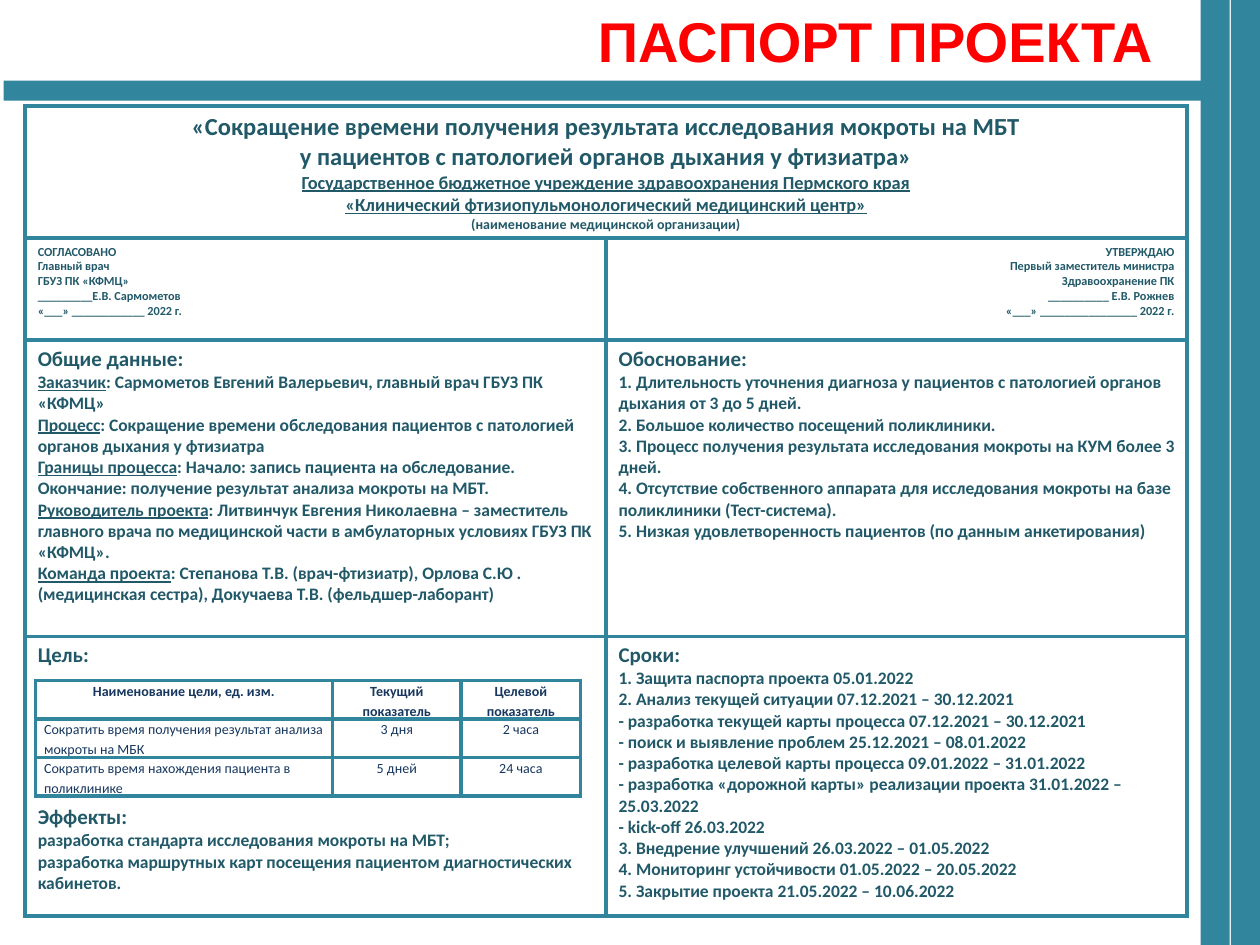
"""Builds the project passport slide with its main table and goals table."""
import pptx
import pptx.dml.color
import pptx.enum.shapes
import pptx.enum.text
import pptx.oxml
import pptx.oxml.ns
import pptx.util

Inches = pptx.util.Inches
Pt = pptx.util.Pt
Align = pptx.enum.text.PP_ALIGN
TEAL, DARK_TEAL, NAVY, RED = "31859C", "215968", "17375E", "FF0000"

HEADER = [
    (14, "«Сокращение времени получения результата исследования мокроты на МБТ"),
    (14, "у пациентов с патологией органов дыхания у фтизиатра»"),
    (10.5, ("Государственное бюджетное учреждение здравоохранения Пермского края", "")),
    (10.5, ("«Клинический фтизиопульмонологический медицинский центр»", "")),
    (8, "(наименование медицинской организации)"),
]
AGREED = ["СОГЛАСОВАНО", "Главный врач", "ГБУЗ ПК «КФМЦ»",
          "_________Е.В. Сармометов", "«___» ____________ 2022 г."]
APPROVED = ["УТВЕРЖДАЮ", "Первый заместитель министра", "Здравоохранение ПК",
            "__________ Е.В. Рожнев", "«___» ________________ 2022 г."]
GENERAL = [
    ("Заказчик", ": Сармометов Евгений Валерьевич, главный врач ГБУЗ ПК «КФМЦ»"),
    ("Процесс", ": Сокращение времени обследования пациентов с патологией органов "
     "дыхания у фтизиатра"),
    ("Границы процесса", ": Начало: запись пациента на обследование. "
     "Окончание: получение результат анализа мокроты на МБТ."),
    ("Руководитель проекта", ": Литвинчук Евгения Николаевна – заместитель главного врача "
     "по медицинской части в амбулаторных условиях ГБУЗ ПК «КФМЦ»."),
    ("Команда проекта", ": Степанова Т.В. (врач-фтизиатр), Орлова С.Ю . "
     "(медицинская сестра), Докучаева Т.В. (фельдшер-лаборант)"),
]
REASONS = [
    "1. Длительность уточнения диагноза у пациентов с патологией органов дыхания от 3 до 5 дней.",
    "2. Большое количество посещений поликлиники.",
    "3. Процесс получения результата исследования мокроты на КУМ более 3 дней.",
    "4. Отсутствие собственного аппарата для исследования мокроты на базе "
    "поликлиники (Тест-система).",
    "5. Низкая удовлетворенность пациентов (по данным анкетирования)",
]
EFFECTS = [
    "разработка стандарта исследования мокроты на МБТ;",
    "разработка маршрутных карт посещения пациентом диагностических кабинетов.",
]
SCHEDULE = [
    "1. Защита паспорта проекта 05.01.2022",
    "2. Анализ текущей ситуации 07.12.2021 – 30.12.2021",
    "- разработка текущей карты процесса 07.12.2021 – 30.12.2021",
    "- поиск и выявление проблем 25.12.2021 – 08.01.2022",
    "- разработка целевой карты процесса 09.01.2022 – 31.01.2022",
    "- разработка «дорожной карты» реализации проекта 31.01.2022 – 25.03.2022",
    "- kick-off 26.03.2022",
    "3. Внедрение улучшений 26.03.2022 – 01.05.2022",
    "4. Мониторинг устойчивости 01.05.2022 – 20.05.2022",
    "5. Закрытие проекта 21.05.2022 – 10.06.2022",
]
GOALS = [
    ["Наименование цели, ед. изм.", "Текущий показатель", "Целевой показатель"],
    ["Сократить время получения результат анализа мокроты на МБК", "3 дня", "2 часа"],
    ["Сократить время нахождения пациента в поликлинике", "5 дней", "24 часа"],
]


def color(value):
    """Turn a hex string into a colour."""
    return pptx.dml.color.RGBColor.from_string(value)


def sized(size, texts):
    """Give every text the same size."""
    return [(size, text) for text in texts]


def section(heading, texts):
    """Put a large heading above body lines."""
    return [(12, heading)] + sized(10, texts)


class Builder:
    """Holds the style and the current page."""

    def __init__(self, page, font="Calibri", accent=TEAL):
        self.page, self.font, self.accent = page, font, accent

    def bar(self, left, top, width, height):
        """Draw a plain accent bar."""
        bar = self.page.shapes.add_shape(
            pptx.enum.shapes.MSO_SHAPE.RECTANGLE,
            Inches(left), Inches(top), Inches(width), Inches(height))
        bar.shadow.inherit = False
        bar.fill.solid()
        bar.fill.fore_color.rgb = color(self.accent)
        bar.line.fill.background()

    def add_lines(self, frame, lines, align=Align.LEFT, ink=DARK_TEAL, bold=True,
                  font=None, spacing=None):
        """Add sized lines; a pair is an underlined label and its text."""
        for index, (size, text) in enumerate(lines):
            para = frame.paragraphs[0] if index == 0 else frame.add_paragraph()
            para.alignment = align
            if spacing:
                para.line_spacing = spacing
            label, rest = ("", text) if isinstance(text, str) else text
            for words, underline in ((label, True), (rest, False)):
                if words:
                    span = para.add_run()
                    span.text = words
                    span.font.name = font or self.font
                    span.font.size = Pt(size)
                    span.font.bold = bold
                    span.font.underline = underline
                    span.font.color.rgb = color(ink)

    def title(self, text, left, top, width, height):
        """Add the right-aligned slide title."""
        box = self.page.shapes.add_textbox(
            Inches(left), Inches(top), Inches(width), Inches(height))
        box.text_frame.word_wrap = True
        box.text_frame.margin_right = Inches(0.35)
        self.add_lines(box.text_frame, [(32, text)], Align.RIGHT, RED, font="Arial")

    def table(self, left, top, widths, heights):
        """Add an unfilled table with accent borders."""
        table = self.page.shapes.add_table(
            len(heights), len(widths), Inches(left), Inches(top),
            Inches(sum(widths)), Inches(sum(heights))).table
        table.first_row = table.horz_banding = False
        for column, width in zip(table.columns, widths):
            column.width = Inches(width)
        for row, height in zip(table.rows, heights):
            row.height = Inches(height)
        for cell in table.iter_cells():
            cell.fill.background()
            self.border(cell)
        return table

    def border(self, cell):
        """Outline one cell."""
        properties = cell._tc.get_or_add_tcPr()
        for index, side in enumerate("LRTB"):
            properties.insert(index, pptx.oxml.parse_xml(
                f'<a:ln{side} {pptx.oxml.ns.nsdecls("a")} w="{Pt(2.25)}"><a:solidFill>'
                f'<a:srgbClr val="{self.accent}"/></a:solidFill></a:ln{side}>'))

    def passport(self):
        """Add the main table of the project."""
        table = self.table(0.2, 0.84, [4.61] * 2, [1.05, 0.81, 2.35, 2.22])
        table.cell(0, 0).merge(table.cell(0, 1))
        goal = section("Цель:", []) + section("Эффекты:", EFFECTS)
        contents = [
            (0, 0, HEADER, Align.CENTER),
            (1, 0, sized(7, AGREED), Align.LEFT),
            (1, 1, sized(7, APPROVED), Align.RIGHT),
            (2, 0, section("Общие данные:", GENERAL), Align.LEFT),
            (2, 1, section("Обоснование:", REASONS), Align.LEFT),
            (3, 0, goal, Align.LEFT),
            (3, 1, section("Сроки:", SCHEDULE), Align.LEFT),
        ]
        for row, column, lines, align in contents:
            self.add_lines(table.cell(row, column).text_frame, lines, align)
        table.cell(3, 0).text_frame.paragraphs[1].space_before = Pt(78)

    def goals(self):
        """Add the small table of target figures."""
        table = self.table(0.28, 5.4, [2.36, 1.02, 0.95], [0.3] * 3)
        for row, texts in enumerate(GOALS):
            for column, text in enumerate(texts):
                cell = table.cell(row, column)
                cell.margin_left = cell.margin_right = Inches(0.07)
                cell.margin_top = cell.margin_bottom = 0
                align = Align.LEFT if row and not column else Align.CENTER
                self.add_lines(cell.text_frame, [(8, text)], align, NAVY, row == 0, spacing=1.15)


def main():
    """Build and save the deck."""
    deck = pptx.Presentation()
    deck.slide_width, deck.slide_height = Inches(10), Inches(7.5)
    builder = Builder(deck.slides.add_slide(deck.slide_layouts[6]))
    for left in (9.77, 9.53):
        builder.bar(left, 0, 0.23, 7.5)
    builder.bar(0.03, 0.64, 9.53, 0.16)
    builder.title("ПАСПОРТ ПРОЕКТА", 3.43, 0, 6.07, 0.64)
    builder.passport()
    builder.goals()
    deck.save("out.pptx")


if __name__ == "__main__":
    main()
